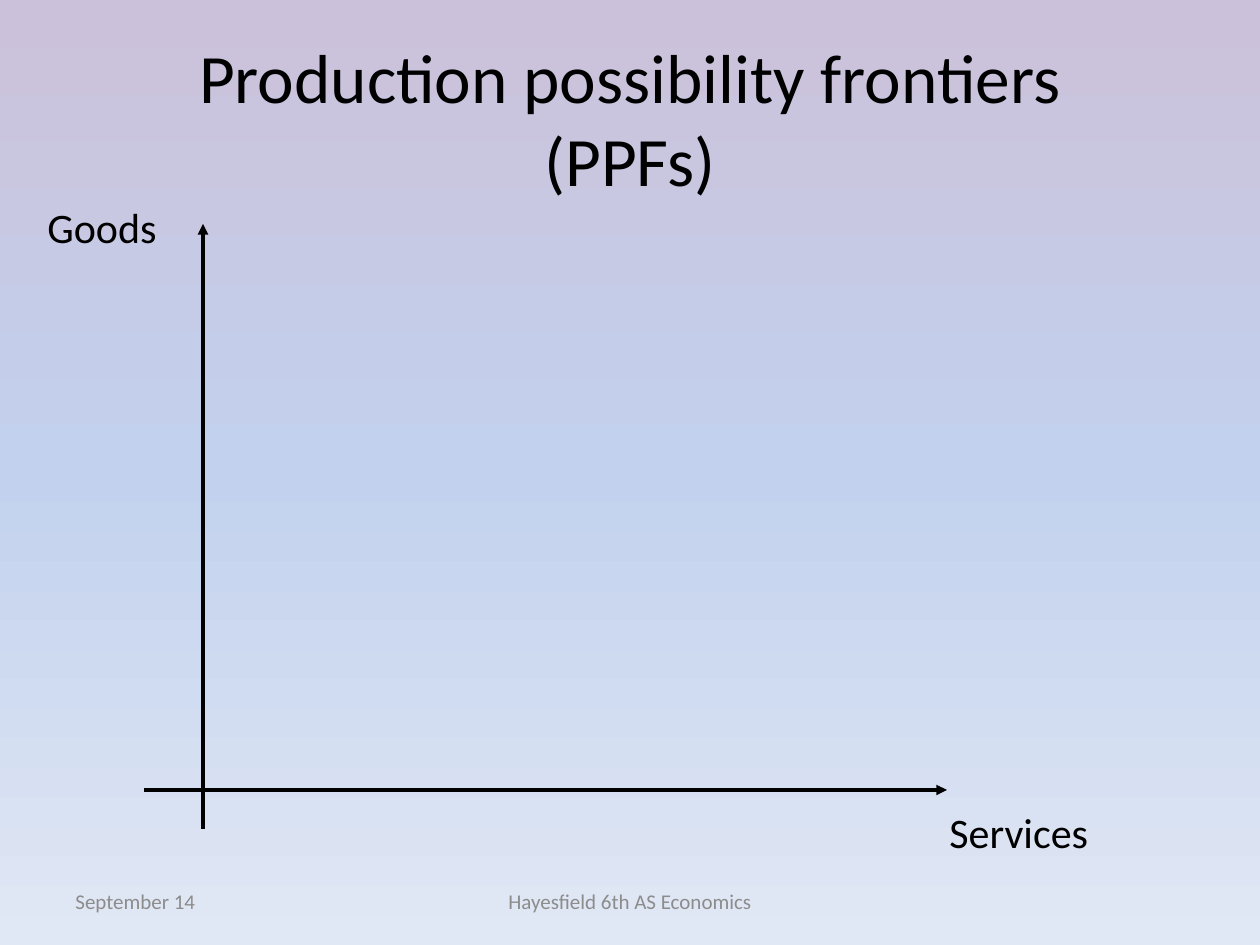
from copy import deepcopy

from pptx import Presentation
from pptx.dml.color import RGBColor
from pptx.enum.shapes import MSO_CONNECTOR
from pptx.enum.text import MSO_ANCHOR, PP_ALIGN
from pptx.oxml.ns import qn
from pptx.oxml.xmlchemy import OxmlElement
from pptx.util import Pt

PX = 914400 / 126
WIDTH, HEIGHT = 1260, 945
COLORS = {
    "ink": "000000",
    "footer": "8C8C8C",
    "sky_top": "CCC1DA",
    "sky_middle": "C2D1ED",
    "sky_bottom": "E1E8F5",
}


def px(length):
    return round(length * PX)


def color(name):
    return RGBColor.from_string(COLORS[name])


def add_text(page, box, text, size, tint="ink", align=PP_ALIGN.LEFT, anchor=MSO_ANCHOR.MIDDLE):
    frame = page.shapes.add_textbox(*map(px, box)).text_frame
    frame.word_wrap = True
    frame.vertical_anchor = anchor
    para = frame.paragraphs[0]
    para.text = text
    para.alignment = align
    para.font.name = "Calibri"
    para.font.size = Pt(size)
    para.font.color.rgb = color(tint)


def add_arrow(page, start, end):
    arrow = page.shapes.add_connector(MSO_CONNECTOR.STRAIGHT, *map(px, start + end))
    arrow.line.color.rgb = color("ink")
    arrow.line.width = Pt(2)
    head = OxmlElement("a:tailEnd")
    head.set("type", "triangle")
    arrow.line._get_or_add_ln().append(head)
    arrow._element.spPr.append(OxmlElement("a:effectLst"))


def paint_background(page):
    fill = page.background.fill
    fill.gradient()
    fill.gradient_angle = 270
    stop_list = next(page._element.iter(qn("a:gsLst")))
    stop_list.insert(1, deepcopy(stop_list[0]))
    names = ("sky_top", "sky_middle", "sky_bottom")
    for index, (stop, name) in enumerate(zip(fill.gradient_stops, names)):
        stop.position = index / 2
        stop.color.rgb = color(name)


def add_title(page, box):
    add_text(page, box, "Production possibility frontiers\v(PPFs)", 39.6, align=PP_ALIGN.CENTER)


def add_axes(page, box):
    left, top, width, height = box
    right, bottom = left + width, top + height
    axis_x, axis_y = left + 59, bottom - 39
    add_arrow(page, (axis_x, bottom), (axis_x, top))
    add_arrow(page, (left, axis_y), (right, axis_y))
    add_text(page, (left - 109, top - 29, 149, 63), "Goods", 24, anchor=MSO_ANCHOR.TOP)
    add_text(page, (right - 10, axis_y + 10, 189, 63), "Services", 24, anchor=MSO_ANCHOR.TOP)


def add_footer(page, box):
    left, top, width, height = box
    center_width = 400
    center_left = left + (width - center_width) // 2
    add_text(page, (left, top, 294, height), "September 14", 12, "footer")
    add_text(page, (center_left, top, center_width, height), "Hayesfield 6th AS Economics",
             12, "footer", PP_ALIGN.CENTER)


def main():
    deck = Presentation()
    deck.slide_width, deck.slide_height = px(WIDTH), px(HEIGHT)
    page = deck.slides.add_slide(deck.slide_layouts[6])
    paint_background(page)
    add_title(page, (63, 38, 1134, 158))
    add_footer(page, (63, 876, 1134, 50))
    add_axes(page, (144, 224, 803, 605))
    deck.save("out.pptx")


if __name__ == "__main__":
    main()
